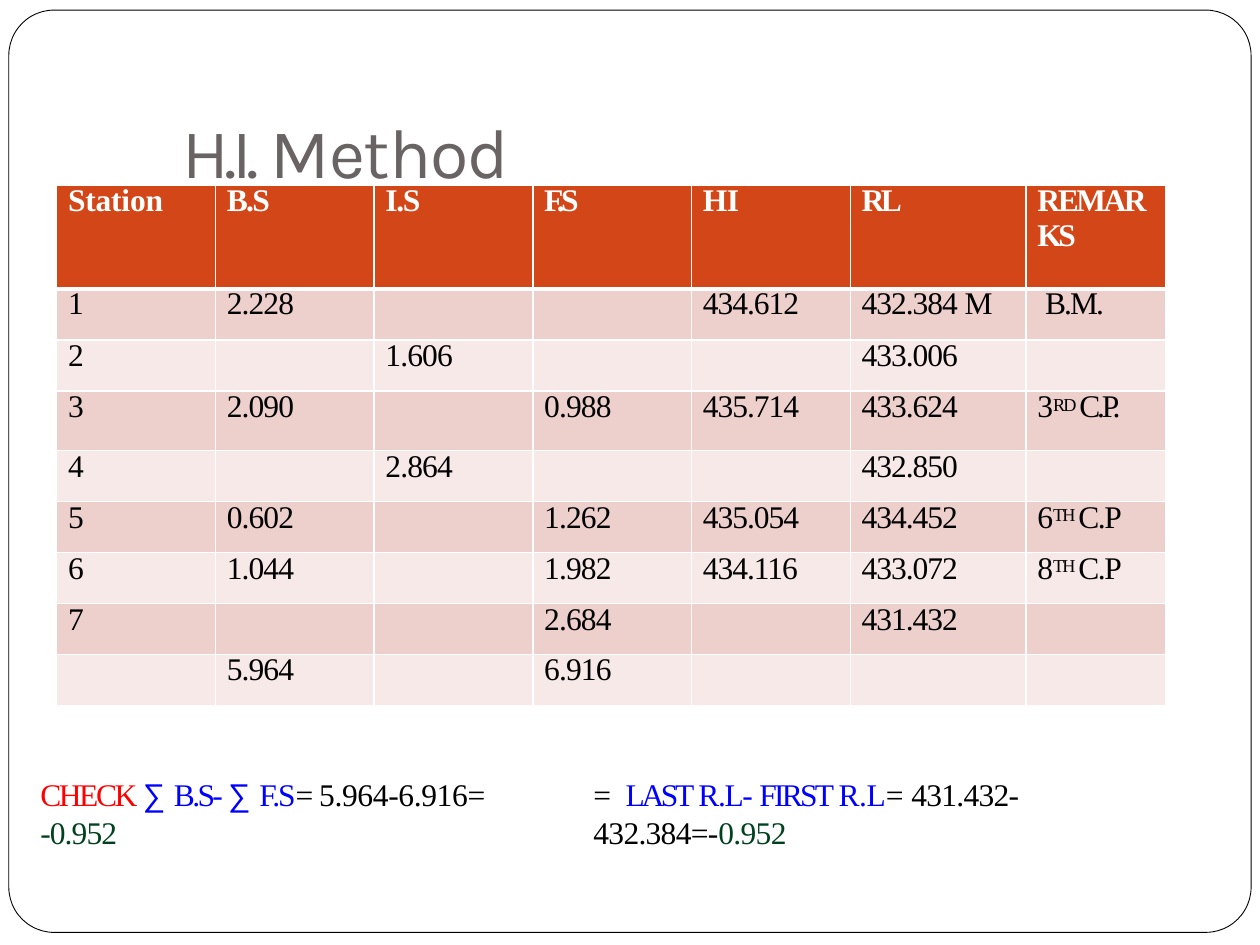
import pptx
import pptx.util
import pptx.dml.color
import pptx.enum.shapes
import pptx.enum.text
import pptx.oxml.ns
import lxml.etree

PX = 4572
SERIF = "Times New Roman"
COLORS = {
    "black": "000000", "white": "FFFFFF", "title": "696363",
    "header": "D24617", "odd": "EDCFCC", "even": "F7E9E7",
    "red": "FF0000", "blue": "0000FF", "green": "00421E",
}
HEADER = [
    [("Station", -0.1)], [("B.S", -0.9)], [("I.S", -0.8)], [("F.S", -2.1)],
    [("HI", -0.3)], [("RL", -2.1)], [("REMAR", -1.4), ("KS", -2)],
]
READINGS = [
    ["1", "2.228", "", "", "434.612", "432.384 M", "B.M."],
    ["2", "", "1.606", "", "", "433.006", ""],
    ["3", "2.090", "", "0.988", "435.714", "433.624", "3 RD C.P."],
    ["4", "", "2.864", "", "", "432.850", ""],
    ["5", "0.602", "", "1.262", "435.054", "434.452", "6 TH C.P"],
    ["6", "1.044", "", "1.982", "434.116", "433.072", "8 TH C.P"],
    ["7", "", "", "2.684", "", "431.432", ""],
    ["", "5.964", "", "6.916", "", "", ""],
]
SPACING = {1: 0, 4: -1.1, 5: -0.5, 7: -0.6}


def px(n):
    return pptx.util.Emu(n * PX)


def rgb(name):
    return pptx.dml.color.RGBColor.from_string(COLORS[name])


class SlideBuilder:
    def __init__(self, prs):
        self.s = prs.slides.add_slide(prs.slide_layouts[5])

    def run(self, p, text, spc=0, color=None, font=None, base=None):
        r = p.add_run()
        r.text = text
        if color:
            r.font.color.rgb = rgb(color)
        if font:
            r.font.name = font
        rPr = r._r.get_or_add_rPr()
        rPr.set("spc", str(round(spc * 100)))
        if base:
            rPr.set("baseline", str(base * 1000))

    def style(self, p, size, name=SERIF, color="black", bold=False):
        p.font.size = pptx.util.Pt(size)
        p.font.name = name
        p.font.color.rgb = rgb(color)
        p.font.bold = bold
        p.alignment = pptx.enum.text.PP_ALIGN.LEFT

    def frame(self, x, y, w, h, radius):
        kind = pptx.enum.shapes.MSO_SHAPE.ROUNDED_RECTANGLE
        sp = self.s.shapes.add_shape(kind, px(x), px(y), px(w), px(h))
        sp.adjustments[0] = radius / min(w, h)
        sp.shadow.inherit = False
        sp.fill.background()
        sp.line.color.rgb = rgb("black")
        sp.line.width = pptx.util.Pt(0.5)

    def fill_box(self, sp, box, runs, size, name, color):
        sp.left, sp.top, sp.width, sp.height = map(px, box)
        tf = sp.text_frame
        tf.word_wrap = True
        tf.auto_size = pptx.enum.text.MSO_AUTO_SIZE.SHAPE_TO_FIT_TEXT
        tf.vertical_anchor = pptx.enum.text.MSO_ANCHOR.TOP
        tf.margin_left = tf.margin_right = tf.margin_bottom = 0
        tf.margin_top = px(2)
        p = tf.paragraphs[0]
        self.style(p, size, name, color)
        p.space_before = pptx.util.Pt(1)
        for run in runs:
            self.run(p, *run)

    def title(self, box, runs):
        self.fill_box(self.s.shapes.title, box, runs, 40, "Karla", "title")

    def text(self, box, runs):
        sp = self.s.shapes.add_textbox(0, 0, 0, 0)
        self.fill_box(sp, box, runs, 18, SERIF, "black")

    def borders(self, cell, widths):
        tcPr = cell._tc.get_or_add_tcPr()
        qn = pptx.oxml.ns.qn
        for i, (side, width) in enumerate(widths.items()):
            ln = lxml.etree.Element(qn("a:ln" + side), w=str(pptx.util.Pt(width)))
            fill = lxml.etree.SubElement(ln, qn("a:solidFill"))
            lxml.etree.SubElement(fill, qn("a:srgbClr"), val=COLORS["white"])
            tcPr.insert(i, ln)

    def cell(self, cell, paragraphs, fill, row, indent=18):
        cell.margin_left = px(indent)
        cell.margin_right = cell.margin_top = cell.margin_bottom = 0
        cell.fill.solid()
        cell.fill.fore_color.rgb = rgb(fill)
        self.borders(cell, {"L": 1, "R": 1, "T": 3 if row == 1 else 1,
                            "B": 3 if row == 0 else 1})
        tf = cell.text_frame
        for i, runs in enumerate(paragraphs):
            p = tf.paragraphs[0] if i == 0 else tf.add_paragraph()
            self.style(p, 18, color="black" if row else "white", bold=row == 0)
            if i == 0:
                p.line_spacing = pptx.util.Pt(18.6 if row == 1 else 19.1)
            for run in runs:
                self.run(p, *run)

    def table(self, x, y, widths, heights, header, rows):
        table = self.s.shapes.add_table(
            len(heights), len(widths), px(x), px(y),
            px(sum(widths)), px(sum(heights))).table
        for column, width in zip(table.columns, widths):
            column.width = px(width)
        for row, height in zip(table.rows, heights):
            row.height = px(height)
        for c, lines in enumerate(header):
            self.cell(table.cell(0, c), [[line] for line in lines], "header", 0)
        for r, values in enumerate(rows, 1):
            for c, value in enumerate(values):
                self.cell(table.cell(r, c), [reading_runs(value)],
                          "odd" if r % 2 else "even", r,
                          30 if value == "B.M." else 18)


def reading_runs(value):
    parts = value.split()
    if len(parts) == 3:
        number, suffix, point = parts
        return [(number, -0.8), (suffix + " ", -1.1, None, None, 21),
                (point, -1.8 if point.endswith(".") else -0.8)]
    if len(parts) == 2:
        return [(parts[0] + " ", -0.6), (parts[1], -2.1)]
    return [(part, SPACING[len(part)]) for part in parts]


def main():
    prs = pptx.Presentation()
    prs.slide_width, prs.slide_height = px(2000), px(1500)
    b = SlideBuilder(prs)
    b.frame(14, 16, 1972, 1464, 72)
    b.title((290, 170, 542, 138), [("H.I. ", -2.8), ("Method", -0.6)])
    b.table(90, 294, [252] * 5 + [279, 222],
            [165, 81, 81, 94] + [81] * 5, HEADER, READINGS)
    b.text((64, 1228, 840, 66), [
        ("CHECK ", -1.4, "red"), ("∑ ", 0, "blue", "Arial"),
        ("B.S- ", -1.5, "blue"), ("∑ ", 0, "blue", "Arial"),
        ("F.S", -1.2, "blue"), ("= ", -1.2),
        ("5.964-6.916= ", -0.2), ("-0.952", -0.5, "green")])
    b.text((942, 1228, 972, 66), [
        ("= ", 1.9), ("LAST ", -1.9, "blue"), ("R.L- ", -0.8, "blue"),
        ("FIRST ", -1.6, "blue"), ("R.L", -0.2, "blue"), ("= ", -0.2),
        ("431.432-432.384=-", -0.4), ("0.952", -0.4, "green")])
    prs.save("out.pptx")


if __name__ == "__main__":
    main()
